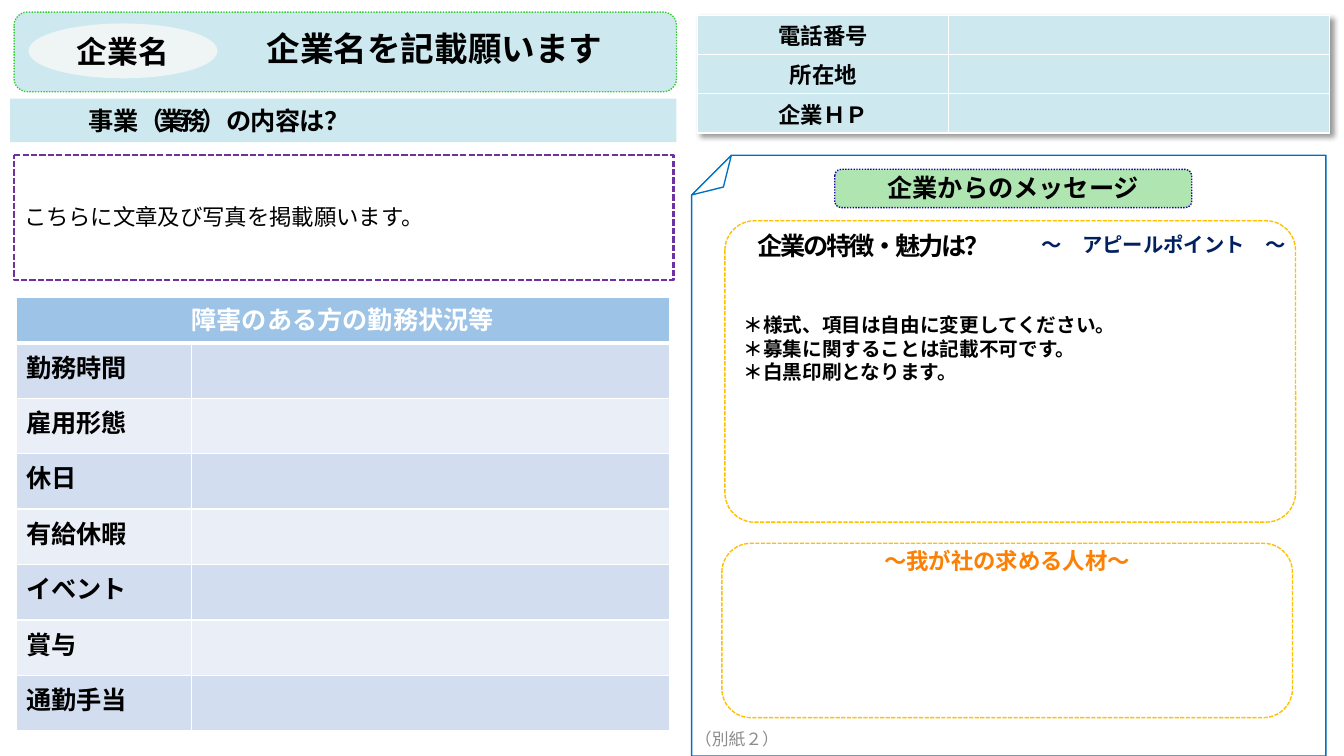
import pptx
import pptx.dml.color
import pptx.enum.dml
import pptx.enum.shapes
import pptx.enum.text
import pptx.oxml
import pptx.oxml.ns
import pptx.util
from pptx.util import Inches

RGBColor = pptx.dml.color.RGBColor
SHAPE = pptx.enum.shapes.MSO_SHAPE
DASH = pptx.enum.dml.MSO_LINE
ALIGN = pptx.enum.text.PP_ALIGN
ANCHOR = pptx.enum.text.MSO_ANCHOR

FONT = "Noto Sans CJK JP"
BLACK = RGBColor(0x00, 0x00, 0x00)
WHITE = RGBColor(0xFF, 0xFF, 0xFF)
GREY = RGBColor(0x8C, 0x8C, 0x8C)
AQUA = RGBColor(0xCD, 0xE9, 0xEF)
PALE = RGBColor(0xEF, 0xF5, 0xF5)
GREEN = RGBColor(0x33, 0xCC, 0x33)
MINT = RGBColor(0xAF, 0xE5, 0xB0)
INDIGO = RGBColor(0x1B, 0x03, 0xAD)
PURPLE = RGBColor(0x70, 0x30, 0xA0)
BLUE = RGBColor(0x00, 0x70, 0xC0)
NAVY = RGBColor(0x00, 0x20, 0x60)
GOLD = RGBColor(0xFF, 0xC0, 0x00)
ORANGE = RGBColor(0xFC, 0x80, 0x04)
HEADER = RGBColor(0x9D, 0xC3, 0xE6)
BANDS = (RGBColor(0xD2, 0xDE, 0xEF), RGBColor(0xEA, 0xEF, 0xF7))

CONTACT_ROWS = ("電話番号", "所在地", "企業ＨＰ")
WORK_ROWS = ("勤務時間", "雇用形態", "休日", "有給休暇", "イベント", "賞与", "通勤手当")


def make_element(markup):
    """Parse one drawing element written as '<a:name ...'."""
    name, rest = markup.split(" ", 1)
    return pptx.oxml.parse_xml(f'{name} {pptx.oxml.ns.nsdecls("a")} {rest}')


def format_span(span, size, color=BLACK, bold=True, spacing=0):
    span.font.size = pptx.util.Pt(size)
    span.font.bold = bold
    span.font.color.rgb = color
    span.font.name = FONT
    properties = span.font._element
    properties.append(make_element(f'<a:ea typeface="{FONT}"/>'))
    if spacing:
        properties.set("spc", str(round(spacing * 100)))


def write(box, text, size, color=BLACK, bold=True, align=ALIGN.CENTER,
          anchor=ANCHOR.MIDDLE, insets=(0.1, 0.05, 0.1, 0.05),
          line_height=None, spacing=0):
    """Fill a box with text; insets run left, top, right, bottom."""
    frame = box.text_frame
    frame.text = text
    frame.word_wrap = True
    frame.vertical_anchor = anchor
    (frame.margin_left, frame.margin_top,
     frame.margin_right, frame.margin_bottom) = map(Inches, insets)
    for para in frame.paragraphs:
        para.alignment = align
        if line_height:
            para.line_spacing = pptx.util.Pt(line_height)
        for span in para.runs:
            format_span(span, size, color, bold, spacing)


def add_panel(page, kind, place, fill=None, line=None, width=1, dash=None,
              corner=None):
    panel = page.shapes.add_shape(kind, *map(Inches, place))
    panel.shadow.inherit = False
    if fill is None:
        panel.fill.background()
    else:
        panel.fill.solid()
        panel.fill.fore_color.rgb = fill
    if line is None:
        panel.line.fill.background()
    else:
        panel.line.color.rgb = line
        panel.line.width = pptx.util.Pt(width)
        if dash:
            panel.line.dash_style = dash
    if corner is not None:
        guides = panel.element.find(".//" + pptx.oxml.ns.qn("a:avLst"))
        for guide in list(guides):
            guides.remove(guide)
        guides.append(make_element(
            f'<a:gd name="adj" fmla="val {round(corner * 100000)}"/>'))
    return panel


def add_label(page, place, text, size, **style):
    label = page.shapes.add_textbox(*map(Inches, place))
    write(label, text, size, **style)


def style_cell(cell, fill, bottom=1):
    properties = cell._tc.get_or_add_tcPr()
    for side, width in (("L", 1), ("R", 1), ("T", 1), ("B", bottom)):
        properties.append(make_element(
            f'<a:ln{side} w="{width * 12700}"><a:solidFill>'
            f'<a:srgbClr val="{WHITE}"/></a:solidFill></a:ln{side}>'))
    cell.fill.solid()
    cell.fill.fore_color.rgb = fill
    cell.margin_top = cell.margin_bottom = Inches(0.03)


def write_cell(cell, text, size, color=BLACK, align=ALIGN.LEFT):
    para = cell.text_frame.paragraphs[0]
    para.text = text
    para.alignment = align
    format_span(para.runs[0], size, color)


def add_grid(page, place, columns, heights):
    grid = page.shapes.add_table(len(heights), len(columns),
                                 *map(Inches, place)).table
    grid.first_row = grid.horz_banding = False
    for column, width in zip(grid.columns, columns):
        column.width = Inches(width)
    for row, height in zip(grid.rows, heights):
        row.height = Inches(height)
    return grid


def add_contact_table(page):
    grid = add_grid(page, (6.92, 0.15, 6.28, 1.17), (2.49, 3.78),
                    [0.39] * len(CONTACT_ROWS))
    shadow = make_element(
        '<a:outerShdw blurRad="50800" dist="38100" dir="2700000" algn="tl">'
        '<a:srgbClr val="000000"><a:alpha val="40000"/></a:srgbClr>'
        '</a:outerShdw>')
    effects = make_element("<a:effectLst />")
    effects.append(shadow)
    grid._tbl.tblPr.insert(0, effects)
    for index, name in enumerate(CONTACT_ROWS):
        for column in range(2):
            style_cell(grid.cell(index, column), AQUA)
        cell = grid.cell(index, 0)
        cell.vertical_anchor = ANCHOR.MIDDLE
        write_cell(cell, name, 16, align=ALIGN.CENTER)


def add_work_table(page):
    grid = add_grid(page, (0.16, 2.95, 6.48, 4.31), (1.74, 4.74),
                    [0.45] + [0.55] * len(WORK_ROWS))
    for column in range(2):
        style_cell(grid.cell(0, column), HEADER, bottom=3)
    grid.cell(0, 0).merge(grid.cell(0, 1))
    write_cell(grid.cell(0, 0), "障害のある方の勤務状況等", 18, WHITE, ALIGN.CENTER)
    for index, name in enumerate(WORK_ROWS):
        for column in range(2):
            cell = grid.cell(index + 1, column)
            style_cell(cell, BANDS[index % 2])
            cell.margin_top = Inches(0.05)
        write_cell(grid.cell(index + 1, 0), name, 18)


def add_business_heading(page):
    bar = add_panel(page, SHAPE.RECTANGLE, (0.1, 0.98, 6.61, 0.43), AQUA)
    write(bar, "", 18, align=ALIGN.LEFT, insets=(0.78, 0.05, 0.1, 0.05))
    para = bar.text_frame.paragraphs[0]
    for text, spacing in (("事業", -0.5), ("（業務）", -3.1), ("の内容は？", -0.5)):
        span = para.add_run()
        span.text = text
        format_span(span, 18, spacing=spacing)


def add_company_name(page):
    add_panel(page, SHAPE.ROUNDED_RECTANGLE, (0.14, 0.12, 6.57, 0.79), AQUA,
              GREEN, dash=DASH.ROUND_DOT)
    badge = add_panel(page, SHAPE.OVAL, (0.29, 0.24, 1.86, 0.53), PALE, PALE)
    write(badge, "企業名", 22, insets=(0, 0, 0, 0))
    title = page.shapes.title
    title.left, title.top, title.width, title.height = map(
        Inches, (2.31, 0.23, 4, 0.5))
    write(title, "企業名を記載願います", 24, anchor=ANCHOR.TOP)
    # Bring the title in front of the filled frame
    title.element.getparent().append(title.element)


def add_message_side(page):
    sheet = add_panel(page, SHAPE.FOLDED_CORNER, (6.86, 1.54, 6.29, 5.96),
                      line=BLUE, corner=0.066)
    sheet.rotation = 180
    heading = add_panel(page, SHAPE.ROUNDED_RECTANGLE, (8.28, 1.68, 3.54, 0.38),
                        MINT, INDIGO, dash=DASH.ROUND_DOT)
    write(heading, "企業からのメッセージ", 18, insets=(0, 0.05, 0, 0.07))

    # Appeal points
    appeal = add_panel(page, SHAPE.ROUNDED_RECTANGLE, (7.19, 2.19, 5.66, 2.99),
                       line=GOLD, dash=DASH.SQUARE_DOT, corner=0.098)
    write(appeal, "＊様式、項目は自由に変更してください。\n"
          "＊募集に関することは記載不可です。\n＊白黒印刷となります。", 14,
          align=ALIGN.LEFT, anchor=ANCHOR.TOP, insets=(0.1, 0.83, 0.1, 0.05),
          line_height=16.8)
    add_label(page, (7.16, 2.24, 6.1, 0.4), "企業の特徴・魅力は？", 18,
              align=ALIGN.LEFT, anchor=ANCHOR.TOP, spacing=-1.6,
              insets=(0.35, 0.05, 0.1, 0.05))
    add_label(page, (10.03, 2.31, 2.88, 0.3), "～　アピールポイント　～", 14.5,
              color=NAVY, align=ALIGN.LEFT, anchor=ANCHOR.TOP, line_height=13.6,
              insets=(0.3, 0.05, 0, 0.05))

    # People wanted
    wanted = add_panel(page, SHAPE.ROUNDED_RECTANGLE, (7.16, 5.39, 5.66, 1.73),
                       line=GOLD, dash=DASH.SQUARE_DOT)
    write(wanted, "～我が社の求める人材～", 16, ORANGE, anchor=ANCHOR.TOP,
          insets=(0.1, 0, 0.1, 0.05), line_height=16)
    add_label(page, (5.06, 7.13, 4.5, 0.4), "（別紙２）", 12, color=GREY, bold=False)


def main():
    deck = pptx.Presentation()
    deck.slide_width, deck.slide_height = Inches(13.33), Inches(7.5)
    page = deck.slides.add_slide(deck.slide_layouts[5])

    # Left: company, business and working conditions
    add_company_name(page)
    add_business_heading(page)
    business = add_panel(page, SHAPE.ROUNDED_RECTANGLE, (0.14, 1.54, 6.54, 1.24),
                         line=PURPLE, width=1.5, dash=DASH.SQUARE_DOT, corner=0)
    write(business, "こちらに文章及び写真を掲載願います。", 16, bold=False,
          align=ALIGN.LEFT, insets=(0.1, 0.05, 0.07, 0.07))
    add_work_table(page)

    # Right: contact details and message
    add_contact_table(page)
    add_message_side(page)
    deck.save("out.pptx")


if __name__ == "__main__":
    main()
